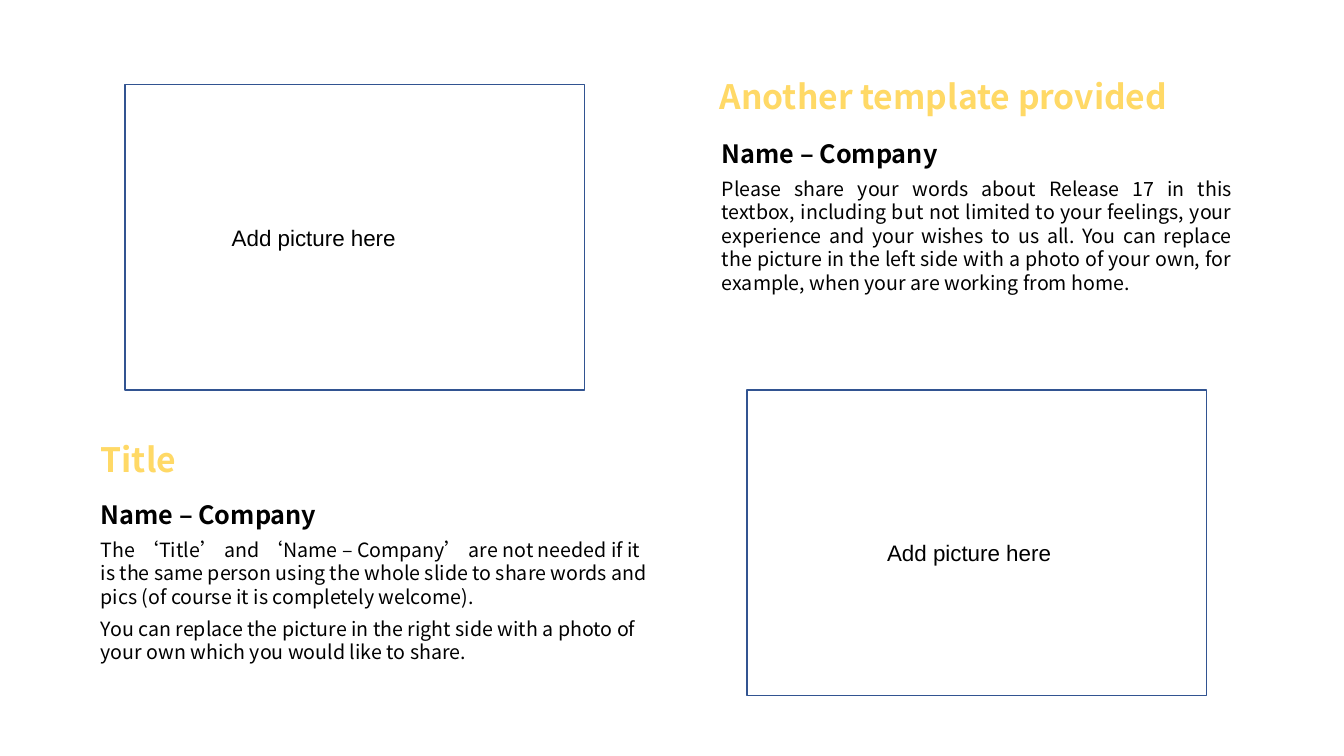
"""Build a slide with two picture frames and two captioned text areas."""
from pptx import Presentation
from pptx import util as u
from pptx.dml.color import RGBColor
from pptx.enum import shapes, text
from pptx.oxml.ns import qn

COLORS = {"heading": "FFD966", "body": "000000", "frame": "325491"}
SANS, ARIAL = "Noto Sans CJK SC", "Arial"


def add_text(box, paragraphs, font, color, tight):
    left, top, width, height = (u.Inches(v) for v in box)
    frame = slide.shapes.add_textbox(left, top, width, height).text_frame
    frame.word_wrap = True
    for index, (words, size, bold, align) in enumerate(paragraphs):
        paragraph = frame.paragraphs[0] if index == 0 else frame.add_paragraph()
        paragraph.alignment = align
        if index:
            paragraph.space_before = u.Pt(6)
        if tight:
            paragraph.line_spacing = u.Pt(round(size * 1.2, 1))
        run = paragraph.add_run()
        run.text = words
        run.font.name, run.font.size, run.font.bold = font, u.Pt(size), bold
        run.font.color.rgb = RGBColor.from_string(COLORS[color])
        east_asian = run.font._element.makeelement(qn("a:ea"), {"typeface": font})
        run.font._element.append(east_asian)


prs = Presentation()
prs.slide_width, prs.slide_height = u.Inches(13.33), u.Inches(7.5)
slide = prs.slides.add_slide(prs.slide_layouts[6])
LEFT, JUSTIFY = text.PP_ALIGN.LEFT, text.PP_ALIGN.JUSTIFY

headings = [
    ((7.04, 0.7, 5.52, 0.5), "Another template provided"),
    ((0.9, 4.31, 6.67, 0.5), "Title"),
]
for box, words in headings:
    add_text(box, [(words, 24, True, LEFT)], SANS, "heading", True)

messages = [
    ((7.06, 1.32, 5.26, 1.67), JUSTIFY, [
        "Please share your words about Release 17 in this textbox, including but "
        "not limited to your feelings, your experience and your wishes to us all. "
        "You can replace the picture in the left side with a photo of your own, "
        "for example, when your are working from home.",
    ]),
    ((0.9, 4.9, 5.73, 1.75), LEFT, [
        "The ‘Title’ and ‘Name – Company’ are not needed if it is the same person "
        "using the whole slide to share words and pics (of course it is completely "
        "welcome).",
        "You can replace the picture in the right side with a photo of your own "
        "which you would like to share.",
    ]),
]
for box, align, bodies in messages:
    author = ("Name – Company", 18, True, LEFT)
    add_text(box, [author] + [(body, 14, False, align) for body in bodies],
             SANS, "body", True)

picture_frames = [
    (7.41, 3.87, (8.7, 5.3, 2.08, 0.37)),
    (1.24, 0.84, (2.2, 2.17, 1.88, 0.37)),
]
for left, top, hint_box in picture_frames:
    picture_frame = slide.shapes.add_shape(
        shapes.MSO_SHAPE.RECTANGLE, u.Inches(left), u.Inches(top),
        u.Inches(4.56), u.Inches(3.03))
    picture_frame.shadow.inherit = False
    picture_frame.fill.background()
    picture_frame.line.color.rgb = RGBColor.from_string(COLORS["frame"])
    picture_frame.line.width = u.Pt(1)
    add_text(hint_box, [("Add picture here", 16, False, LEFT)], ARIAL, "body", False)

prs.save("out.pptx")
